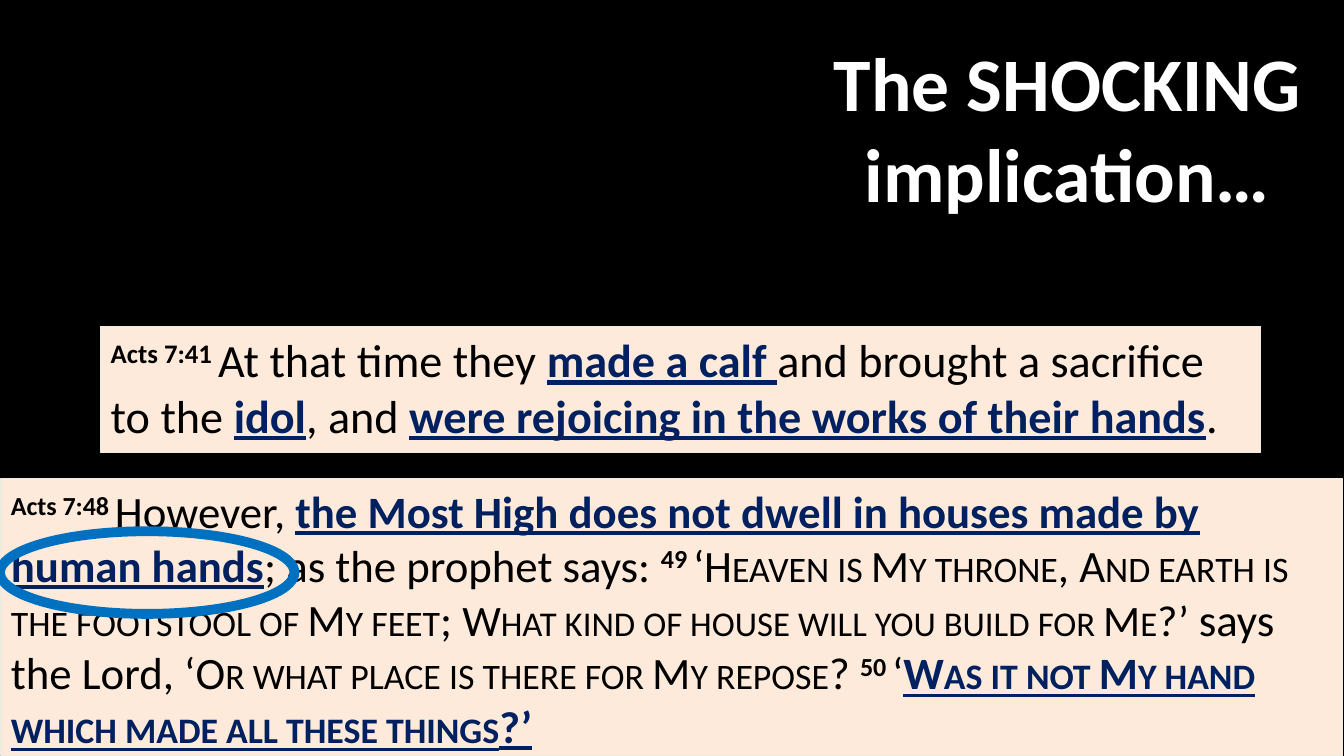
from pptx import Presentation
from pptx import util as u
from pptx.dml.color import RGBColor
from pptx.enum import shapes, text

KIND = shapes.MSO_SHAPE
BOLD = {"bold": True}
VERSE = {"bold": True, "base": 30}
KEY = {"bold": True, "line": True, "color": "002060"}
CAPS = {"caps": True}


def tint(code):
    """Turn a hex string into a colour."""
    return RGBColor.from_string(code)


def write(para, words, size=32, color="000000", bold=False, line=False,
          base=0, caps=False, face="Calibri"):
    """Add one formatted run to a paragraph."""
    run = para.add_run()
    run.text = words
    font = run.font
    font.name, font.size, font.bold = face, u.Pt(size), bold
    font.underline = line
    font.color.rgb = tint(color)
    props = run._r.get_or_add_rPr()
    if base:
        props.set("baseline", str(base * 1000))
    if caps:
        props.set("cap", "small")


class Deck:
    """Hold the style and the current slide."""

    def __init__(self):
        """Open a black blank slide."""
        self.show = Presentation()
        self.show.slide_width = u.Inches(13.33)
        self.show.slide_height = u.Inches(7.5)
        self.slide = self.show.slides.add_slide(self.show.slide_layouts[6])
        back = self.slide.background.fill
        back.solid()
        back.fore_color.rgb = tint("000000")

    def shape(self, kind, box, fill=None, edge=None, width=0.75):
        """Add a preset shape with an optional fill and edge."""
        item = self.slide.shapes.add_shape(kind, *map(u.Inches, box))
        item.shadow.inherit = False
        if fill:
            item.fill.solid()
            item.fill.fore_color.rgb = tint(fill)
        else:
            item.fill.background()
        if edge:
            item.line.color.rgb = tint(edge)
            item.line.width = u.Pt(width)
        else:
            item.line.fill.background()
        return item

    def quote(self, box, size, parts):
        """Add a cream panel with a Bible passage."""
        frame = self.shape(KIND.RECTANGLE, box, "FDEADA", "EEECE1").text_frame
        frame.word_wrap = True
        frame.vertical_anchor = text.MSO_ANCHOR.TOP
        para = frame.paragraphs[0]
        para.alignment = text.PP_ALIGN.LEFT
        for words, look in parts:
            write(para, words, **{"size": size, **look})

    def ring(self, box):
        """Add a blue ring around key words."""
        self.shape(KIND.OVAL, box, edge="0070C0", width=7)

    def title(self, box, words):
        """Add the title in an unpainted callout."""
        item = self.shape(KIND.ROUNDED_RECTANGULAR_CALLOUT, box)
        for spot, value in enumerate((-0.22, 0.5, 0.17)):
            item.adjustments[spot] = value
        frame = item.text_frame
        frame.word_wrap = True
        frame.vertical_anchor = text.MSO_ANCHOR.MIDDLE
        para = frame.paragraphs[0]
        para.alignment = text.PP_ALIGN.CENTER
        write(para, words, size=54, color="FFFFFF", **BOLD)


def main():
    """Build and save the slide."""
    deck = Deck()
    deck.quote((0.01, 4.75, 13.31, 2.75), 32, [
        ("Acts 7:48 ", VERSE),
        ("However, ", {}),
        ("the Most High does not dwell in houses made by human hands", KEY),
        ("; as the prophet says: ", {}),
        ("49 ", VERSE),
        ("‘", {}),
        ("Heaven is My throne", CAPS),
        (", ", {}),
        ("And earth is the footstool of My feet", CAPS),
        ("; ", {}),
        ("What kind of house will you build for Me", {"size": 31, **CAPS}),
        ("?’ ", {"size": 31}),
        ("says the Lord, ‘", {}),
        ("Or what place is there for My repose", CAPS),
        ("? ", {}),
        ("50 ", VERSE),
        ("‘", {}),
        ("Was it not My hand which made all these things", {**KEY, **CAPS}),
        ("?’", KEY),
    ])
    deck.ring((0, 5.27, 2.92, 0.82))
    deck.quote((1, 3.24, 11.5, 1.25), 33, [
        ("Acts 7:41 ", VERSE),
        ("At that time they ", {}),
        ("made a calf ", KEY),
        ("and brought a sacrifice to the ", {}),
        ("idol", KEY),
        (", and ", {}),
        ("were rejoicing in the works of their hands", KEY),
        (".", {}),
    ])
    deck.title((7.84, 0.5, 5.49, 1.51), "The SHOCKING implication…")
    deck.show.save("out.pptx")


if __name__ == "__main__":
    main()
